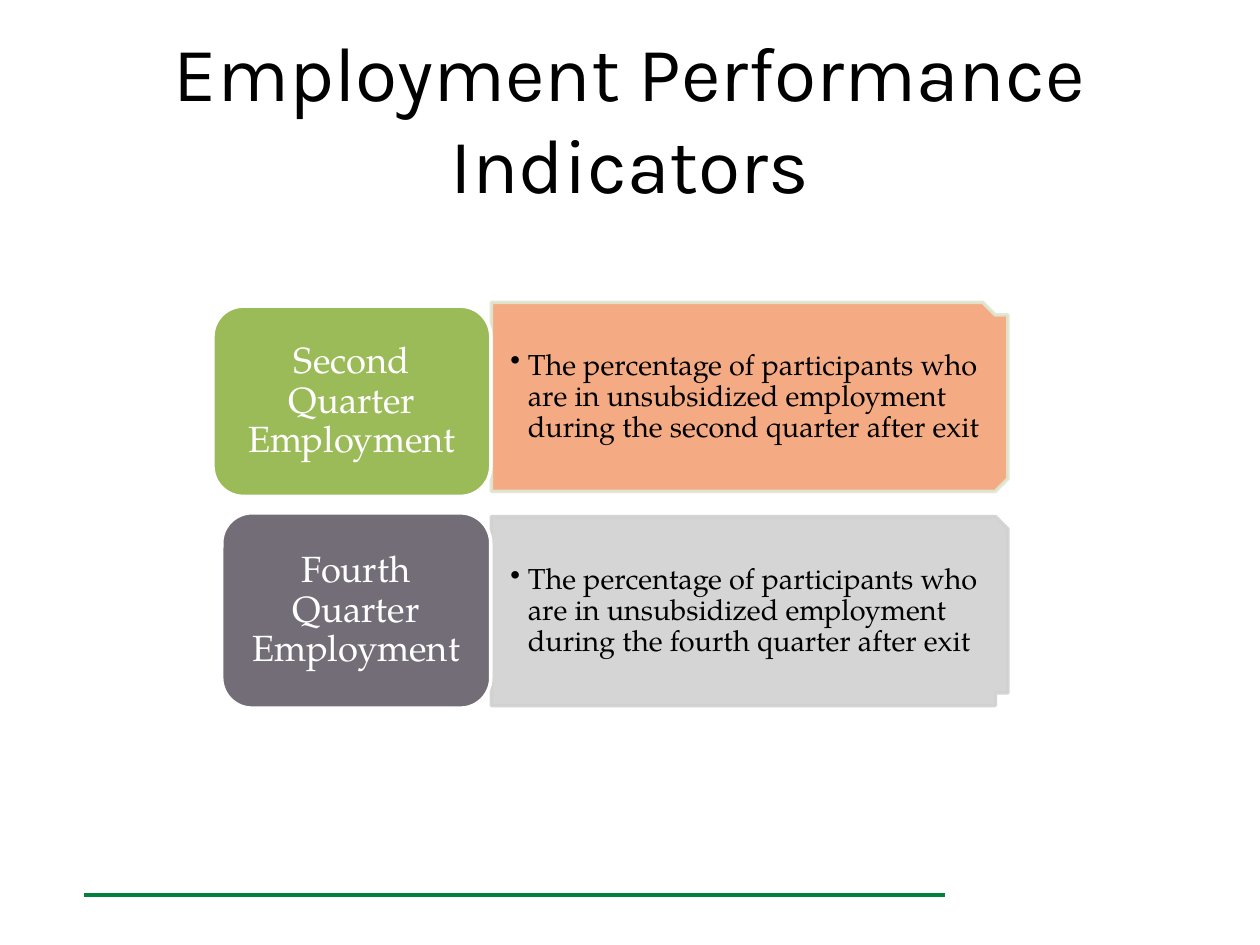
"""Build the employment performance indicators slide."""
import math

from lxml import etree
from pptx import Presentation
from pptx import util as u
from pptx.dml.color import RGBColor
from pptx.enum import shapes, text
from pptx.oxml.ns import qn

SERIF = "TeX Gyre Pagella"
RADIUS = 2.4
MIDDLE, RIGHT = 38.95, 80
INDICATORS = [
    ("Second", 16.9, 24.3, 15.1, "9BBB59", "F3A276", "DEE7D1"),
    ("Fourth", 17.6, 40.7, 15.5, "736D77", "D1D1D1", "D1D1D1"),
]


def paint(color_format, color, opacity=100):
    color_format.fore_color.rgb = RGBColor.from_string(color)
    if opacity < 100:
        element = color_format._xPr.find(".//" + qn("a:srgbClr"))
        etree.SubElement(element, qn("a:alpha"), val=str(opacity * 1000))


def write(shape, words, size, font, color, alignment, margins, bullet=False):
    frame = shape.text_frame
    frame.word_wrap = True
    frame.vertical_anchor = text.MSO_ANCHOR.MIDDLE
    frame.margin_left, frame.margin_top, frame.margin_right, frame.margin_bottom = map(u.Inches, margins)
    paragraph = frame.paragraphs[0]
    paragraph.text = words
    paragraph.alignment = alignment
    if bullet:
        properties = paragraph._p.get_or_add_pPr()
        properties.set("marL", str(u.Inches(0.14)))
        properties.set("indent", str(-u.Inches(0.14)))
        etree.SubElement(properties, qn("a:buChar"), char="•")
    paragraph.font.size = u.Pt(size)
    paragraph.font.name = font
    paragraph.font.color.rgb = RGBColor.from_string(color)
    return paragraph


presentation = Presentation()
presentation.slide_width, presentation.slide_height = u.Inches(10), u.Inches(7.5)
cell = presentation.slide_width // 100
slide = presentation.slides.add_slide(presentation.slide_layouts[5])

title = slide.shapes.title
title.left, title.top, title.width, title.height = (int(n * cell) for n in (5, 3, 90, 12.5))
write(title, "Employment Performance Indicators", 44, "Karla", "000000",
      text.PP_ALIGN.CENTER, (0.1, 0.05, 0.1, 0.05))

rule = slide.shapes.add_connector(
    shapes.MSO_CONNECTOR.STRAIGHT, *(int(n * cell) for n in (6.7, 71, 75, 71)))
paint(rule.line.fill if rule.line.fill.solid() is None else None, "00823E")
rule.line.width = u.Pt(2.25)
etree.SubElement(rule._element.spPr, qn("a:effectLst"))

for quarter, left, top, height, label_color, panel_color, edge_color in INDICATORS:
    bottom = top + height
    points = [(MIDDLE, top)]
    for center_y, start in ((top + RADIUS, -90), (bottom - RADIUS, 0)):
        for degrees in range(start, start + 91, 6):
            angle = math.radians(degrees)
            points.append((RIGHT - RADIUS + RADIUS * math.cos(angle),
                           center_y + RADIUS * math.sin(angle)))
    points.append((MIDDLE, bottom))
    outline = slide.shapes.build_freeform(MIDDLE, top, scale=cell)
    outline.add_line_segments(points[1:], close=True)
    panel = outline.convert_to_shape()
    label = slide.shapes.add_shape(
        shapes.MSO_SHAPE.ROUNDED_RECTANGLE,
        *(int(n * cell) for n in (left, top, MIDDLE - left, height)))
    label.adjustments[0] = RADIUS / height

    for shape, fill, edge, opacity in ((panel, panel_color, edge_color, 90),
                                       (label, label_color, "FFFFFF", 100)):
        shape.shadow.inherit = False
        shape.line.width = u.Pt(2)
        for target, color in ((shape.fill, fill), (shape.line.fill, edge)):
            target.solid()
            paint(target, color, opacity)

    sentence = ("The percentage of participants who are in unsubsidized employment "
                f"during the {quarter.lower()} quarter after exit")
    for paragraph in (
        write(panel, sentence, 16.5, SERIF, "000000", text.PP_ALIGN.LEFT,
              (0.15, 0.15, 0.22, 0.15), bullet=True),
        write(label, f"{quarter} Quarter Employment", 20.8, SERIF, "FFFFFF",
              text.PP_ALIGN.CENTER, (0.08, 0.04, 0.08, 0.04)),
    ):
        paragraph.line_spacing = 0.9

presentation.save("out.pptx")
